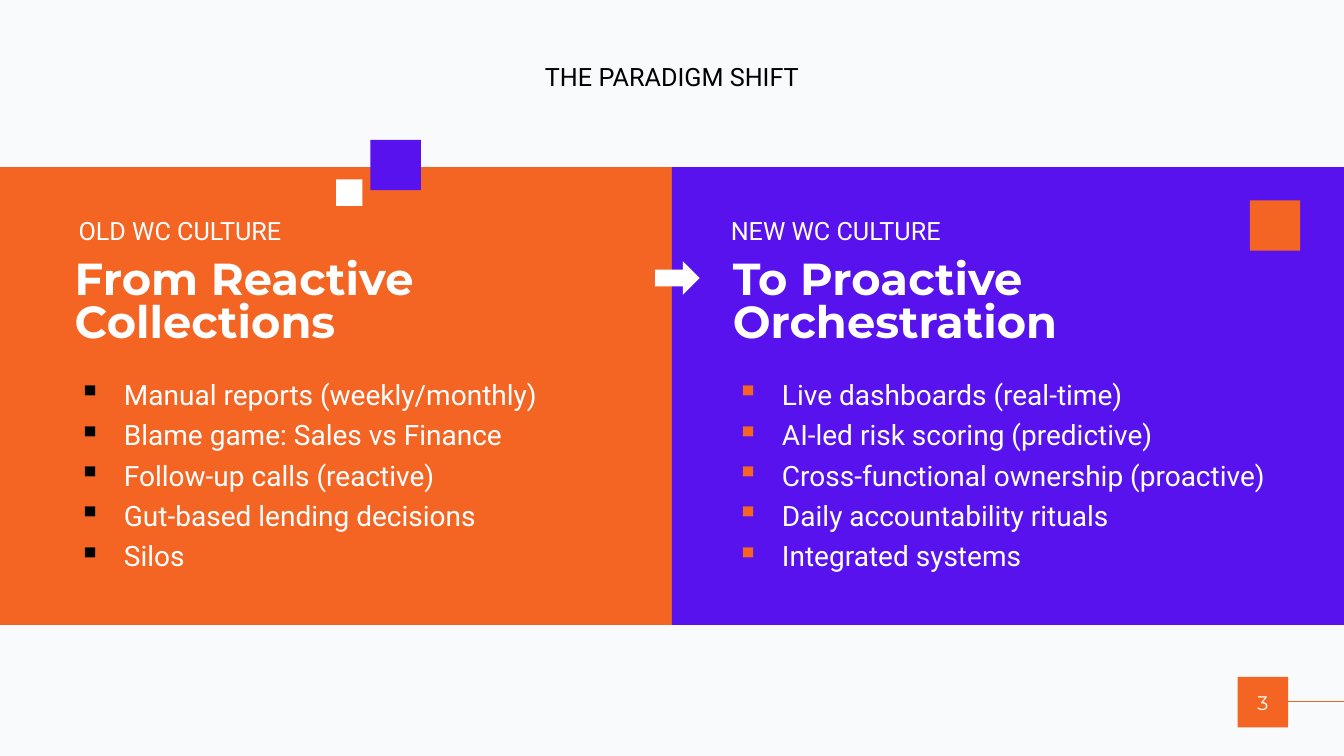
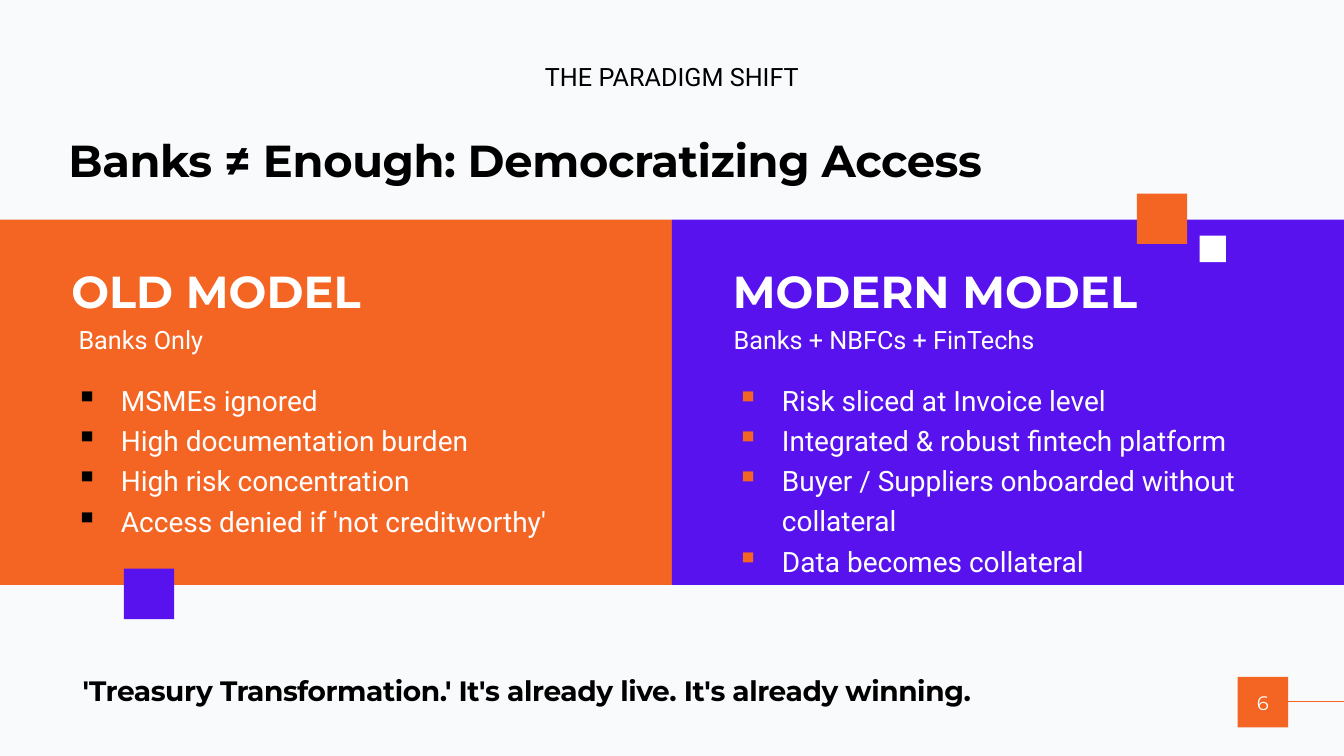
from dataclasses import dataclass
from typing import Optional

import pptx
import pptx.dml.color
import pptx.enum.shapes
import pptx.enum.text
import pptx.oxml.ns
import pptx.presentation
import pptx.shapes.autoshape
import pptx.slide
import pptx.util
from lxml import etree

RGB = pptx.dml.color.RGBColor
ALIGN = pptx.enum.text.PP_ALIGN
ANCHOR = pptx.enum.text.MSO_ANCHOR
SHAPE = pptx.enum.shapes.MSO_SHAPE
qn = pptx.oxml.ns.qn

# Grid: 160 columns by 90 rows of square cells, 12 to the inch
COLS, ROWS, PER_INCH = 160, 90, 12
HALF = COLS / 2
TILE, CHIP = 6, 3.15


def cells(n: float) -> pptx.util.Emu:
    return pptx.util.Inches(n / PER_INCH)


@dataclass(frozen=True)
class Style:
    font: str
    size: int
    bold: bool = False
    tracking: int = 0
    spacing: Optional[float] = None


@dataclass(frozen=True)
class Theme:
    paper: str = "F8FAFC"
    ink: str = "000000"
    white: str = "FFFFFF"
    orange: str = "F46524"
    violet: str = "5712EE"
    label: Style = Style("Roboto", 18)
    heading: Style = Style("Montserrat", 32, True, spacing=0.8)
    title: Style = Style("Montserrat", 32, True, -30)
    closing: Style = Style("Montserrat", 20, True, -30)
    bullets: Style = Style("Roboto", 20, spacing=1.2)
    number: Style = Style("Montserrat", 14)


T = Theme()


@dataclass(frozen=True)
class Box:
    x: float
    y: float
    w: float
    h: float

    def emu(self) -> list[pptx.util.Emu]:
        return [cells(n) for n in (self.x, self.y, self.w, self.h)]


@dataclass(frozen=True)
class Panel:
    fill: str
    marker: str
    heading: str
    heading_box: Box
    caption: str
    caption_box: Box
    items: tuple[str, ...]
    items_box: Box


@dataclass(frozen=True)
class Square:
    x: float
    y: float
    size: float
    fill: str


@dataclass(frozen=True)
class Comparison:
    number: int
    top: float
    height: float
    panels: tuple[Panel, Panel]
    squares: tuple[Square, ...]


# Text helpers
def write(tf, lines: tuple[str, ...], style: Style, color: str,
          align: ALIGN = ALIGN.LEFT, marker: str = "") -> None:
    for i, line in enumerate(lines):
        p = tf.add_paragraph() if i else tf.paragraphs[0]
        p.alignment = align
        if style.spacing:
            p.line_spacing = style.spacing
        r = p.add_run()
        r.text = line
        font = {"name": style.font, "size": pptx.util.Pt(style.size), "bold": style.bold}
        for key, value in font.items():
            setattr(r.font, key, value)
        r.font.color.rgb = RGB.from_string(color)
        if style.tracking:
            r._r.get_or_add_rPr().set("spc", str(style.tracking))
        if marker:
            add_bullet(p, marker)


def add_bullet(p, color: str) -> None:
    indent = pptx.util.Inches(0.45)
    pPr = p._p.get_or_add_pPr()
    pPr.set("marL", str(indent))
    pPr.set("indent", str(-indent))
    clr = etree.SubElement(pPr, qn("a:buClr"))
    etree.SubElement(clr, qn("a:srgbClr")).set("val", color)
    etree.SubElement(pPr, qn("a:buSzPct")).set("val", "110000")
    etree.SubElement(pPr, qn("a:buChar")).set("char", "▪")


def add_text(s: pptx.slide.Slide, box: Box, lines: tuple[str, ...], style: Style,
             color: str, align: ALIGN = ALIGN.LEFT, marker: str = "",
             insets: tuple[float, ...] = (1.2, 0.6, 1.2, 0.6)) -> None:
    tf = s.shapes.add_textbox(*box.emu()).text_frame
    left, top, right, bottom = map(cells, insets)
    frame = {"word_wrap": True, "margin_left": left, "margin_top": top,
             "margin_right": right, "margin_bottom": bottom,
             "auto_size": pptx.enum.text.MSO_AUTO_SIZE.SHAPE_TO_FIT_TEXT}
    for key, value in frame.items():
        setattr(tf, key, value)
    write(tf, lines, style, color, align, marker)


# Shape helpers
def add_block(s: pptx.slide.Slide, box: Box, fill: str,
              kind: SHAPE = SHAPE.RECTANGLE) -> pptx.shapes.autoshape.Shape:
    sp = s.shapes.add_shape(kind, *box.emu())
    sp.shadow.inherit = False
    sp.fill.solid()
    sp.fill.fore_color.rgb = RGB.from_string(fill)
    sp.line.fill.background()
    return sp


def add_page_number(s: pptx.slide.Slide, number: int) -> None:
    tf = add_block(s, Box(147.35, 80.6, TILE, TILE), T.orange).text_frame
    frame = {"margin_left": 0, "margin_right": 0, "vertical_anchor": ANCHOR.MIDDLE}
    for key, value in frame.items():
        setattr(tf, key, value)
    write(tf, (str(number),), T.number, T.white, ALIGN.CENTER)
    rule = s.shapes.add_connector(pptx.enum.shapes.MSO_CONNECTOR.STRAIGHT,
                                  *map(cells, (COLS, 83.5, 153.15, 83.5)))
    rule.line.color.rgb = RGB.from_string(T.orange)
    rule.line.width = pptx.util.Pt(0.5)
    etree.SubElement(rule._element.spPr, qn("a:effectLst"))


# Shared layout of a comparison slide
def add_comparison(prs: pptx.presentation.Presentation, c: Comparison) -> pptx.slide.Slide:
    s = prs.slides.add_slide(prs.slide_layouts[6])
    s.background.fill.solid()
    s.background.fill.fore_color.rgb = RGB.from_string(T.paper)
    add_page_number(s, c.number)
    add_text(s, Box(HALF / 2, 6.7, HALF, 4.8), ("THE PARADIGM SHIFT",),
             T.label, T.ink, ALIGN.CENTER)
    for i, panel in enumerate(c.panels):
        add_block(s, Box(i * HALF, c.top, HALF, c.height), panel.fill)
        add_text(s, panel.heading_box, (panel.heading,), T.heading, T.white,
                 insets=(0, 2.4, 1.2, 1.2))
        add_text(s, panel.caption_box, (panel.caption,), T.label, T.white)
        add_text(s, panel.items_box, panel.items, T.bullets, T.white, marker=panel.marker)
    for q in c.squares:
        add_block(s, Box(q.x, q.y, q.size, q.size), q.fill)
    return s


# Content
CULTURE = Comparison(
    3, 19.9, 54.5,
    (Panel(T.orange, T.ink,
           "From Reactive Collections", Box(8.9, 28.7, 54.7, 14),
           "OLD WC CULTURE", Box(8.15, 25, 40, 4.8),
           ("Manual reports (weekly/monthly)", "Blame game: Sales vs Finance",
            "Follow-up calls (reactive)", "Gut-based lending decisions", "Silos"),
           Box(8.15, 43.55, 65.9, 25.1)),
     Panel(T.violet, T.orange,
           "To Proactive Orchestration", Box(87.25, 28.7, 52.8, 14),
           "NEW WC CULTURE", Box(85.8, 25, 40, 4.8),
           ("Live dashboards (real-time)", "AI-led risk scoring (predictive)",
            "Cross-functional ownership (proactive)", "Daily accountability rituals",
            "Integrated systems"),
           Box(86.5, 43.55, 71, 25.1))),
    (Square(44.1, 16.65, TILE, T.violet), Square(40, 21.35, CHIP, T.white),
     Square(148.8, 23.85, TILE, T.orange)))

MODEL = Comparison(
    6, 26.15, 43.5,
    (Panel(T.orange, T.ink,
           "OLD MODEL", Box(8.5, 30.25, 54.7, 8.9),
           "Banks Only", Box(8.15, 38.05, 40, 4.8),
           ("MSMEs ignored", "High documentation burden", "High risk concentration",
            "Access denied if 'not creditworthy'"),
           Box(7.8, 44.2, 65.9, 20.3)),
     Panel(T.violet, T.orange,
           "MODERN MODEL", Box(87.25, 30.25, 63.6, 8.9),
           "Banks + NBFCs + FinTechs", Box(86.15, 38.05, 49.2, 4.8),
           ("Risk sliced at Invoice level", "Integrated & robust fintech platform",
            "Buyer / Suppliers onboarded without collateral", "Data becomes collateral"),
           Box(86.5, 44.2, 71, 25))),
    (Square(14.75, 67.7, TILE, T.violet), Square(142.8, 28.05, CHIP, T.white),
     Square(135.35, 23.05, TILE, T.orange)))


def main() -> None:
    prs = pptx.Presentation()
    prs.slide_width, prs.slide_height = cells(COLS), cells(ROWS)

    # Culture shift, with an arrow across the panels
    s = add_comparison(prs, CULTURE)
    add_block(s, Box(78, 31.1, 5.3, 4), T.white, SHAPE.RIGHT_ARROW)

    # Funding models, with a title and a closing line
    s = add_comparison(prs, MODEL)
    add_text(s, Box(8.15, 13.45, 142.7, 11.3), ("Banks ≠ Enough: Democratizing Access",),
             T.title, T.ink, insets=(0, 2.4, 1.2, 2.4))
    add_text(s, Box(8.65, 79.55, 144.5, 5.3),
             ("'Treasury Transformation.' It's already live. It's already winning.",),
             T.closing, T.ink)

    prs.save("out.pptx")


if __name__ == "__main__":
    main()
